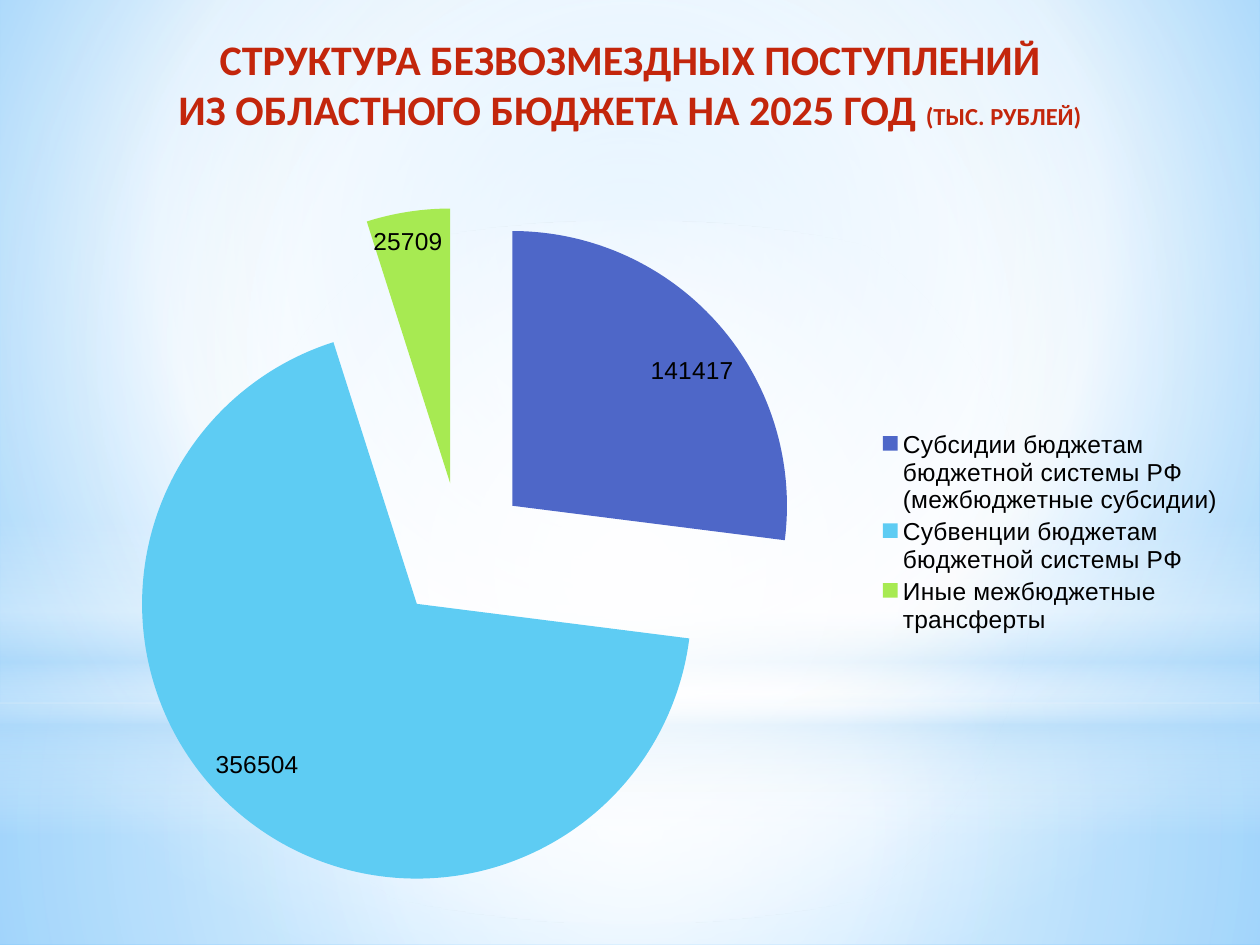
from dataclasses import dataclass
from typing import Optional

from lxml.etree import SubElement
from pptx import Presentation
from pptx.chart.data import CategoryChartData
from pptx.dml.color import RGBColor
from pptx.enum.chart import XL_CHART_TYPE as ChartType
from pptx.enum.chart import XL_LABEL_POSITION as LabelPosition
from pptx.enum.chart import XL_LEGEND_POSITION as LegendPosition
from pptx.enum.shapes import MSO_SHAPE as Preset
from pptx.enum.text import MSO_ANCHOR as Anchor
from pptx.enum.text import PP_ALIGN as Align
from pptx.oxml.ns import qn
from pptx.util import Inches, Pt

WIDTH, HEIGHT = Inches(10), Inches(7.5)
TITLE_ONLY = 5
WHITE = RGBColor(0xFF, 0xFF, 0xFF)
HAZE = RGBColor(0xB4, 0xDC, 0xFA)
SKY = RGBColor(0x9E, 0xD5, 0xFF)
AZURE = RGBColor(0x5B, 0xB9, 0xFF)
RED = RGBColor(0xC3, 0x26, 0x0C)
BLACK = RGBColor(0, 0, 0)


@dataclass(frozen=True)
class Stop:
    position: int
    color: RGBColor
    opacity: int = 100


@dataclass(frozen=True)
class Gradient:
    stops: tuple[Stop, ...]
    focus: Optional[tuple[int, int, int, int]] = (50, 50, 50, 50)
    angle: int = 0


@dataclass(frozen=True)
class Glow:
    preset: Preset
    top: float
    height: float
    gradient: Gradient


@dataclass(frozen=True)
class Grant:
    name: str
    amount: int
    color: RGBColor


BACKDROP = Gradient((Stop(0, SKY), Stop(60, WHITE), Stop(100, AZURE)), (20, 10, 20, 60))
GLOWS = (
    Glow(Preset.RECTANGLE, 0.744, 0.256,
         Gradient((Stop(0, WHITE, 91), Stop(37, WHITE, 76), Stop(100, HAZE, 79)))),
    Glow(Preset.RECTANGLE, 0, 0.744,
         Gradient((Stop(0, WHITE, 89), Stop(48, WHITE, 62), Stop(100, HAZE, 79)))),
    Glow(Preset.RECTANGLE, 0.55, 0.333,
         Gradient((Stop(0, WHITE, 0), Stop(29, WHITE, 30), Stop(45, HAZE, 40),
                   Stop(55, WHITE, 26), Stop(65, HAZE, 60), Stop(100, WHITE, 0)), None, 90)),
    Glow(Preset.OVAL, 0.233, 0.744, Gradient((Stop(0, WHITE), Stop(56, WHITE, 0)))),
)
GRANTS = (
    Grant("Субсидии бюджетам бюджетной системы РФ (межбюджетные субсидии)",
          141417, RGBColor(0x4E, 0x67, 0xC8)),
    Grant("Субвенции бюджетам бюджетной системы РФ", 356504, RGBColor(0x5E, 0xCC, 0xF3)),
    Grant("Иные межбюджетные трансферты", 25709, RGBColor(0xA7, 0xEA, 0x52)),
)


def apply_gradient(fill, owner, gradient: Gradient) -> None:
    fill.gradient()
    node = owner.find(".//" + qn("a:gradFill"))
    for child in list(node):
        node.remove(child)
    stop_list = SubElement(node, qn("a:gsLst"))
    for stop in gradient.stops:
        mark = SubElement(stop_list, qn("a:gs"), pos=str(stop.position * 1000))
        color = SubElement(mark, qn("a:srgbClr"), val=str(stop.color))
        if stop.opacity < 100:
            SubElement(color, qn("a:alpha"), val=str(stop.opacity * 1000))
    if gradient.focus is None:
        SubElement(node, qn("a:lin"), ang=str(gradient.angle * 60000), scaled="0")
        return
    shade = SubElement(node, qn("a:path"), path="circle")
    sides = {side: str(share * 1000) for side, share in zip("ltrb", gradient.focus)}
    SubElement(shade, qn("a:fillToRect"), **sides)


def draw_glow(page, glow: Glow) -> None:
    shape = page.shapes.add_shape(
        glow.preset, 0, round(HEIGHT * glow.top), WIDTH, round(HEIGHT * glow.height))
    shape.shadow.inherit = False
    shape.line.fill.background()
    apply_gradient(shape.fill, shape.element, glow.gradient)


def format_font(font, *, size: int, name: str = "Arial",
                color: RGBColor = BLACK, bold: bool = False) -> None:
    font.size, font.name, font.bold = Pt(size), name, bold
    font.color.rgb = color


def add_text(para, text: str, **style) -> None:
    span = para.add_run()
    span.text = text
    para.alignment = Align.CENTER
    para.space_before = para.space_after = Pt(0)
    para.line_spacing = 1.0
    format_font(span.font, **style)


def write_title(page) -> None:
    box = page.shapes.title
    box.left, box.top = Inches(0.12), Inches(0.21)
    box.width, box.height = Inches(9.76), Inches(0.91)
    box.element.getparent().append(box.element)
    frame = box.text_frame
    frame.word_wrap = True
    frame.vertical_anchor = Anchor.MIDDLE
    style = dict(name="Calibri", color=RED, bold=True)
    add_text(frame.paragraphs[0], "СТРУКТУРА БЕЗВОЗМЕЗДНЫХ ПОСТУПЛЕНИЙ", size=24, **style)
    para = frame.add_paragraph()
    add_text(para, "ИЗ ОБЛАСТНОГО БЮДЖЕТА НА 2025 ГОД ", size=24, **style)
    add_text(para, "(ТЫС. РУБЛЕЙ)", size=14, **style)


def place_part(part, following: str, inner: bool = False, **shares: float) -> None:
    for old in part.findall(qn("c:layout")):
        part.remove(old)
    layout = part.makeelement(qn("c:layout"))
    part.find(qn(following)).addprevious(layout)
    manual = SubElement(layout, qn("c:manualLayout"))
    if inner:
        SubElement(manual, qn("c:layoutTarget"), val="inner")
    for side in "xy":
        SubElement(manual, qn(f"c:{side}Mode"), val="edge")
    for side, share in shares.items():
        SubElement(manual, qn(f"c:{side}"), val=str(share))


def draw_pie(page) -> None:
    data = CategoryChartData()
    data.categories = [grant.name for grant in GRANTS]
    data.add_series("Series 1", [grant.amount for grant in GRANTS])
    chart = page.shapes.add_chart(
        ChartType.PIE, Inches(0.35), Inches(1.23), Inches(9.45), Inches(5.99), data).chart
    chart.has_title = False
    format_font(chart.font, size=18)
    chart.has_legend = True
    legend = chart.legend
    legend.position = LegendPosition.RIGHT
    legend.include_in_layout = False
    format_font(legend.font, size=14)
    place_part(legend._element, "c:overlay", x=0.7, y=0.36, w=0.29, h=0.28)

    plot = chart.plots[0]
    plot.vary_by_categories = True
    place_part(plot._element.getparent(), "c:pieChart", inner=True,
               x=0.06, y=0.07, w=0.58, h=0.91)
    series = plot.series[0]
    for index, grant in enumerate(GRANTS):
        fill = series.points[index].format.fill
        fill.solid()
        fill.fore_color.rgb = grant.color
    first_point = series._element.find(qn("c:dPt"))
    explosion = first_point.makeelement(qn("c:explosion"), val="25")
    first_point.addprevious(explosion)
    labels = series.data_labels
    labels.show_value = True
    labels.position = LabelPosition.BEST_FIT
    format_font(labels.font, size=14)


def main() -> None:
    deck = Presentation()
    deck.slide_width, deck.slide_height = WIDTH, HEIGHT
    page = deck.slides.add_slide(deck.slide_layouts[TITLE_ONLY])
    apply_gradient(page.background.fill, page.element, BACKDROP)
    for glow in GLOWS:
        draw_glow(page, glow)
    write_title(page)
    draw_pie(page)
    deck.save("out.pptx")


if __name__ == "__main__":
    main()
